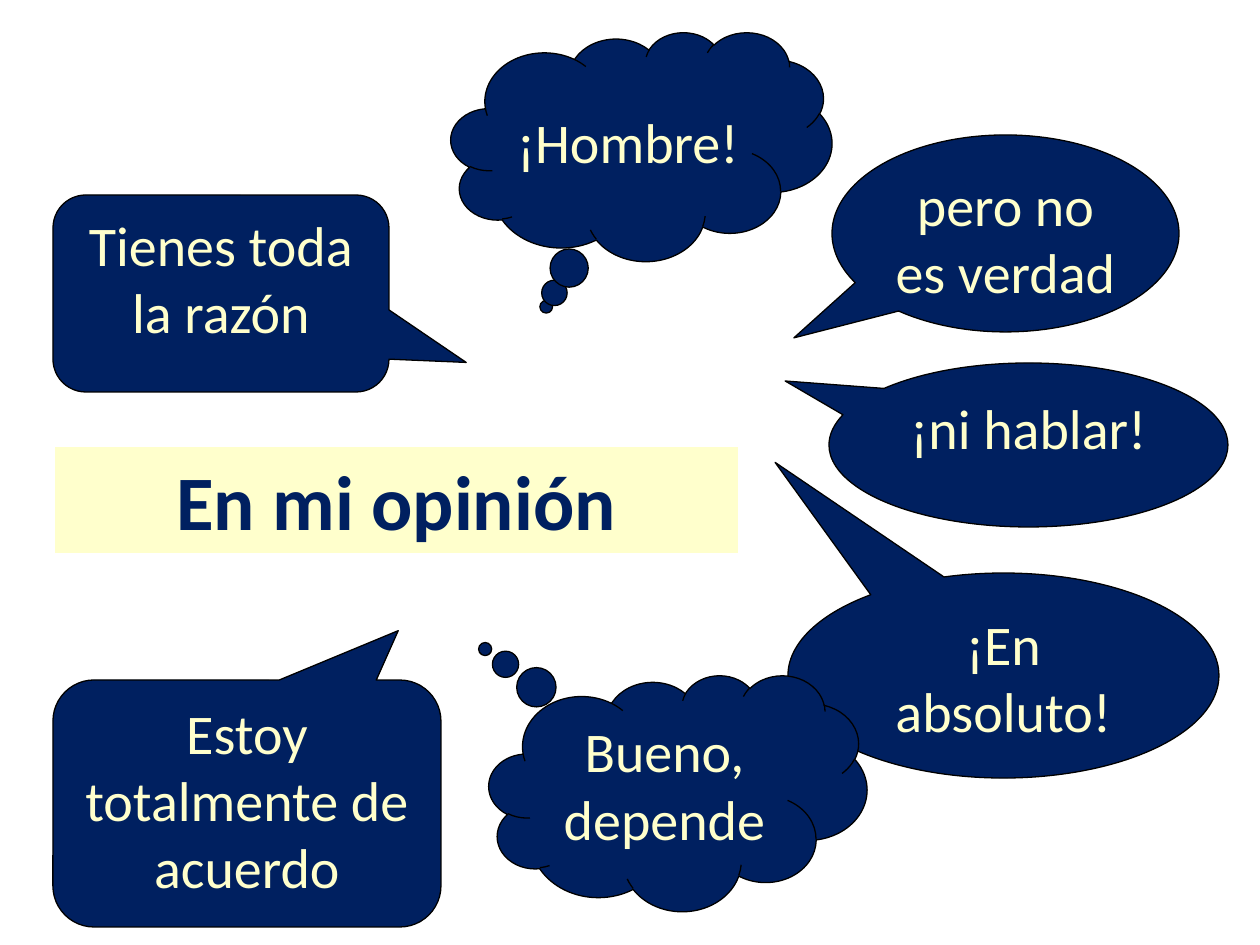
from pptx import Presentation
from pptx.dml.color import RGBColor
from pptx.enum.shapes import MSO_SHAPE
from pptx.enum.text import MSO_ANCHOR, MSO_AUTO_SIZE, PP_ALIGN
from pptx.util import Emu, Pt

PX = 914400 / 126
FONT = "Calibri"
COLORS = {"navy": "002060", "cream": "FFFFCC", "outline": "000000"}
TITLE_ONLY = 5
CENTER = PP_ALIGN.CENTER
TOP, MIDDLE = MSO_ANCHOR.TOP, MSO_ANCHOR.MIDDLE
NO_AUTOSIZE = MSO_AUTO_SIZE.NONE
OVAL = MSO_SHAPE.OVAL_CALLOUT
ROUNDED = MSO_SHAPE.ROUNDED_RECTANGULAR_CALLOUT
CLOUD = MSO_SHAPE.CLOUD_CALLOUT

# Kind, box (left, top, width, height), pointer adjustments, text, anchor
BUBBLES = [
    (OVAL, (829, 363, 399, 164), (-0.61, -0.39), "¡ni hablar!", TOP),
    (ROUNDED, (53, 195, 336, 197), (0.73, 0.35), "Tienes toda la razón", TOP),
    (ROUNDED, (53, 680, 388, 247), (0.39, -0.7), "Estoy totalmente de acuerdo", TOP),
    (OVAL, (832, 135, 347, 197), (-0.61, 0.53), "pero no es verdad", TOP),
    (OVAL, (788, 573, 431, 205), (-0.53, -1.04), "¡En absoluto!", TOP),
    (CLOUD, (451, 32, 381, 229), (-0.25, 0.7), "¡Hombre!", MIDDLE),
    (CLOUD, (489, 675, 378, 236), (-0.51, -0.61), "Bueno, depende", TOP),
]


def px(value):
    return Emu(round(value * PX))


def color(name):
    return RGBColor.from_string(COLORS[name])


def fill_shape(shape, name):
    shape.fill.solid()
    shape.fill.fore_color.rgb = color(name)


def write_text(shape, text, size, color_name, anchor, bold=False):
    text_frame = shape.text_frame
    text_frame.text = text
    text_frame.word_wrap = True
    text_frame.auto_size = NO_AUTOSIZE
    text_frame.vertical_anchor = anchor
    paragraph = text_frame.paragraphs[0]
    paragraph.alignment = CENTER
    font = paragraph.runs[0].font
    font.name = FONT
    font.size = Pt(size)
    font.bold = bold
    font.color.rgb = color(color_name)


def format_title(slide, box, text):
    title = slide.shapes.title
    title.left, title.top, title.width, title.height = map(px, box)
    fill_shape(title, "cream")
    write_text(title, text, 44, "navy", TOP, bold=True)


def add_bubble(slide, kind, box, pointer, text, anchor):
    bubble = slide.shapes.add_shape(kind, *map(px, box))
    bubble.shadow.inherit = False
    for index, value in enumerate(pointer):
        bubble.adjustments[index] = value
    fill_shape(bubble, "navy")
    bubble.line.color.rgb = color("outline")
    bubble.line.width = Pt(0.75)
    write_text(bubble, text, 32, "cream", anchor)


def main():
    presentation = Presentation()
    presentation.slide_width = px(1260)
    presentation.slide_height = px(945)
    slide = presentation.slides.add_slide(presentation.slide_layouts[TITLE_ONLY])

    # Central topic
    format_title(slide, (55, 447, 683, 106), "En mi opinión")

    # Speech and thought bubbles around it
    for bubble in BUBBLES:
        add_bubble(slide, *bubble)

    presentation.save("out.pptx")


if __name__ == "__main__":
    main()
